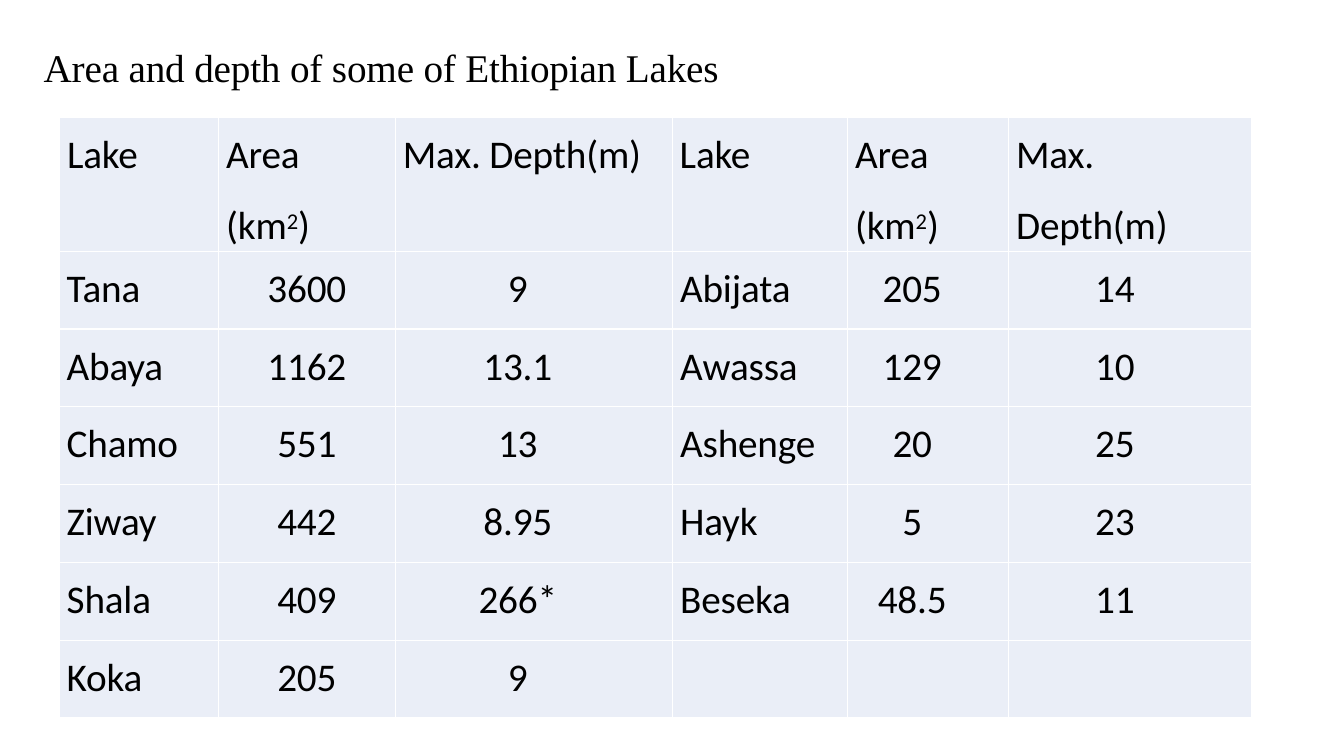
"""Build a slide with a table of the area and depth of Ethiopian lakes."""
from dataclasses import dataclass

from lxml import etree
from pptx import Presentation
from pptx.dml.color import RGBColor
from pptx.enum.text import PP_ALIGN
from pptx.oxml.ns import qn
from pptx.util import Cm, Pt

LEFT, CENTER = PP_ALIGN.LEFT, PP_ALIGN.CENTER
COLORS = {"text": "000000", "cell": "EAEEF7", "border": "FFFFFF"}
BODY_FONT, TITLE_FONT = "Calibri", "Times New Roman"
HEADER_HEIGHT, ROW_HEIGHT = 3.38, 1.96
HEADER_INDENT = 0.19


@dataclass(frozen=True)
class Column:
    width: float
    header: tuple[str, ...]
    values: tuple[str, ...]
    align: PP_ALIGN = LEFT
    left: float = 0
    right: float = 0


AREA = ("Area", "(km²)")
COLUMNS = [
    Column(4.01, ("Lake",), ("Tana", "Abaya", "Chamo", "Ziway", "Shala", "Koka"), left=0.18),
    Column(4.45, AREA, ("3600", "1162", "551", "442", "409", "205"), CENTER),
    Column(6.98, ("Max. Depth(m)",), ("9", "13.1", "13", "8.95", "266*", "9"), CENTER, right=0.8),
    Column(4.42, ("Lake",), ("Abijata", "Awassa", "Ashenge", "Hayk", "Beseka", ""), left=0.2),
    Column(4.06, AREA, ("205", "129", "20", "5", "48.5", ""), CENTER, right=0.8),
    Column(6.12, ("Max.", "Depth(m)"), ("14", "10", "25", "23", "11", ""), left=2.18),
]


def add_run(p, text: str, font: str, size: float = 28, baseline: int = 0) -> None:
    r = p.add_run()
    r.text = text
    r.font.name = font
    r.font.size = Pt(size)
    r.font.color.rgb = RGBColor.from_string(COLORS["text"])
    rPr = r.font._element
    rPr.set("spc", "-10")
    if baseline:
        rPr.set("baseline", str(baseline))


def add_line(p, text: str) -> None:
    base, power, rest = text.partition("²")
    add_run(p, base, BODY_FONT)
    if power:
        add_run(p, "2", BODY_FONT, 27.8, 26000)
        add_run(p, rest, BODY_FONT)


def set_borders(cell) -> None:
    tcPr = cell._tc.get_or_add_tcPr()
    for i, side in enumerate(("a:lnL", "a:lnR", "a:lnT", "a:lnB")):
        ln = etree.Element(qn(side), w=str(Pt(1)))
        fill = etree.SubElement(ln, qn("a:solidFill"))
        etree.SubElement(fill, qn("a:srgbClr"), val=COLORS["border"])
        tcPr.insert(i, ln)


def fill_cell(cell, lines: tuple[str, ...], align: PP_ALIGN, left: float, right: float) -> None:
    cell.fill.solid()
    cell.fill.fore_color.rgb = RGBColor.from_string(COLORS["cell"])
    set_borders(cell)
    cell.margin_left, cell.margin_right = Cm(left), Cm(right)
    cell.margin_top, cell.margin_bottom = Cm(0.35), Cm(0)
    tf = cell.text_frame
    for i, line in enumerate(lines):
        p = tf.add_paragraph() if i else tf.paragraphs[0]
        p.alignment = align
        p.space_before = Pt(16.8 if i else 9.8)
        if line:
            add_line(p, line)


def add_title(s, text: str) -> None:
    sp = s.shapes.add_textbox(Cm(1.07), Cm(1.07), Cm(17.25), Cm(1.24))
    tf = sp.text_frame
    tf.word_wrap = True
    tf.margin_left = Cm(0.03)
    tf.margin_top = Cm(0.03)
    tf.margin_right = tf.margin_bottom = Cm(0)
    add_run(tf.paragraphs[0], text, TITLE_FONT)


def add_lakes(s) -> None:
    count = len(COLUMNS[0].values)
    width = sum(c.width for c in COLUMNS)
    height = HEADER_HEIGHT + count * ROW_HEIGHT
    table = s.shapes.add_table(
        count + 1, len(COLUMNS), Cm(1.5), Cm(2.95), Cm(width), Cm(height)
    ).table
    table.first_row = table.horz_banding = False
    for i, row in enumerate(table.rows):
        row.height = Cm(ROW_HEIGHT if i else HEADER_HEIGHT)
    for j, column in enumerate(COLUMNS):
        table.columns[j].width = Cm(column.width)
        fill_cell(table.cell(0, j), column.header, LEFT, HEADER_INDENT, 0)
        for i, value in enumerate(column.values, 1):
            fill_cell(table.cell(i, j), (value,), column.align, column.left, column.right)


def main() -> None:
    prs = Presentation()
    prs.slide_width, prs.slide_height = Cm(33.87), Cm(19.05)
    s = prs.slides.add_slide(prs.slide_layouts[6])
    add_lakes(s)
    add_title(s, "Area and depth of some of Ethiopian Lakes")
    prs.save("out.pptx")


if __name__ == "__main__":
    main()
